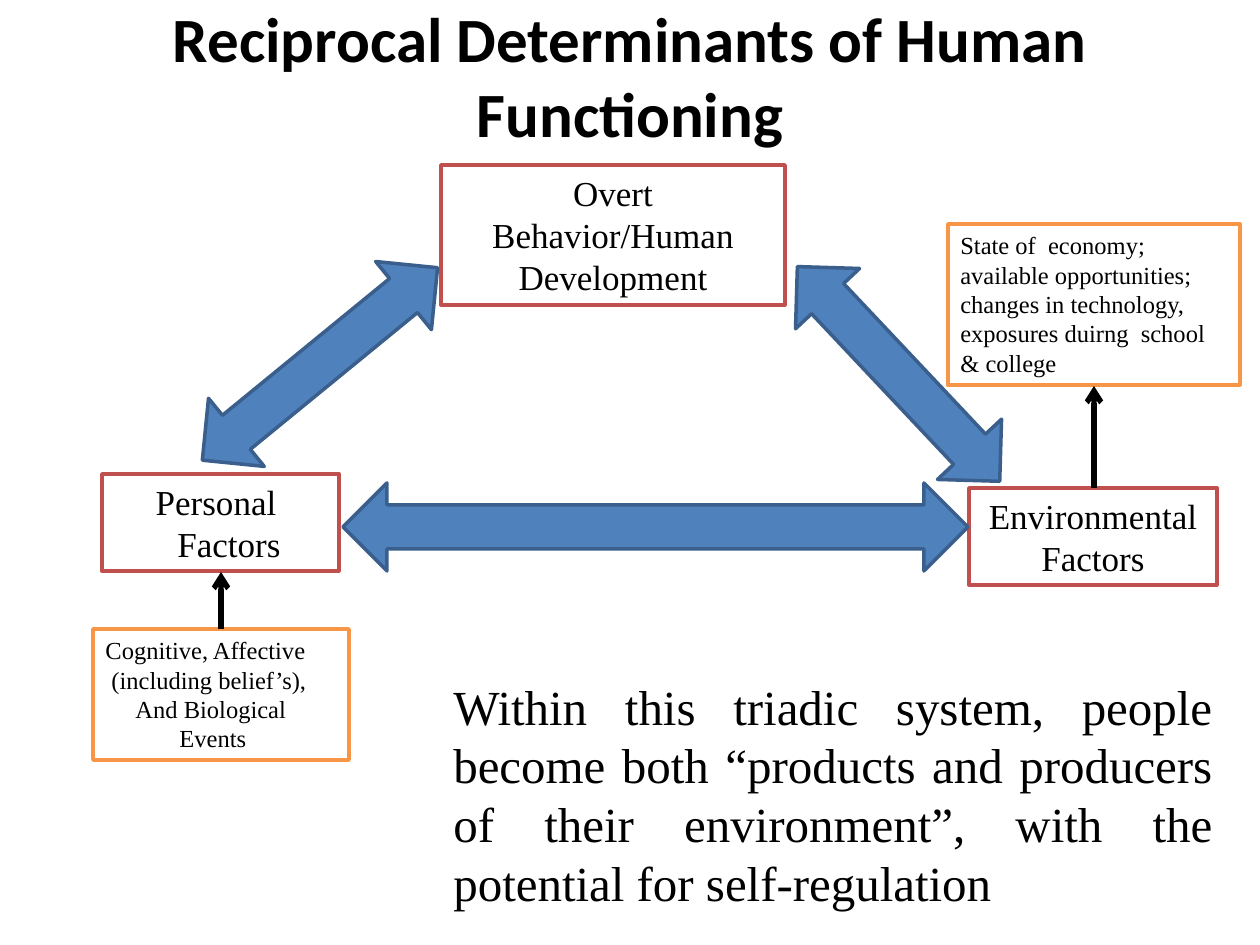
from dataclasses import dataclass

import pptx
import pptx.util
from lxml import etree
from pptx.dml.color import RGBColor
from pptx.enum.shapes import MSO_CONNECTOR, MSO_SHAPE
from pptx.enum.text import MSO_ANCHOR, MSO_AUTO_SIZE, PP_ALIGN
from pptx.oxml.ns import qn

EMU_PER_PX = 914400 / 126


@dataclass(frozen=True)
class Theme:
    ink: str = "000000"
    paper: str = "FFFFFF"
    factor: str = "C0504D"
    detail: str = "F79646"
    arrow: str = "4F81BD"
    arrow_edge: str = "3A5F8C"
    heading_font: str = "Calibri"
    body_font: str = "Times New Roman"
    title_size: int = 36
    statement_size: int = 28
    factor_size: int = 20
    detail_size: int = 14
    edge_width: int = 2
    pointer_width: int = 3


@dataclass(frozen=True)
class Area:
    left: int
    top: int
    width: int
    height: int

    def emu(self) -> list[int]:
        return [px(n) for n in (self.left, self.top, self.width, self.height)]


@dataclass(frozen=True)
class Line:
    text: str
    indent: int = 0


@dataclass(frozen=True)
class Factor:
    area: Area
    lines: tuple[Line, ...]


@dataclass(frozen=True)
class Detail:
    area: Area
    lines: tuple[Line, ...]
    pointer: tuple[int, int, int, int]


@dataclass(frozen=True)
class Exchange:
    area: Area
    rotation: float = 0


THEME = Theme()

FACTORS = (
    Factor(Area(441, 165, 344, 140), (Line("Overt Behavior/Human Development"),)),
    Factor(Area(969, 488, 248, 97), (Line("Environmental Factors"),)),
    Factor(Area(102, 474, 237, 97), (Line("Personal "), Line("Factors", 17))),
)

EXCHANGES = (
    Exchange(Area(343, 483, 625, 88)),
    Exchange(Area(168, 320, 304, 88), 320.7),
    Exchange(Area(751, 330, 295, 88), 46.7),
)

DETAILS = (
    Detail(
        Area(93, 629, 256, 131),
        (
            Line("Cognitive, Affective"),
            Line("(including belief’s),", 6),
            Line("And Biological", 30),
            Line("Events", 74),
        ),
        (221, 629, 221, 572),
    ),
    Detail(
        Area(948, 224, 292, 161),
        (Line("State of  economy; available opportunities; changes in technology, "
              "exposures duirng  school & college"),),
        (1094, 488, 1094, 386),
    ),
)

STATEMENT = ("Within this triadic system, people become both “products and producers "
             "of their environment”, with the potential for self-regulation")


def px(count: int) -> int:
    return round(count * EMU_PER_PX)


def color(code: str) -> RGBColor:
    return RGBColor.from_string(code)


def write(frame, lines: tuple[Line, ...], *, size: int, font: str = THEME.body_font,
          bold: bool = False, align=PP_ALIGN.LEFT, anchor=MSO_ANCHOR.TOP,
          before: int = 0, after: int = 0, fit=MSO_AUTO_SIZE.NONE) -> None:
    frame.word_wrap = True
    frame.auto_size = fit
    frame.vertical_anchor = anchor
    for index, line in enumerate(lines):
        para = frame.paragraphs[0] if index == 0 else frame.add_paragraph()
        para.alignment = align
        para.space_before = pptx.util.Pt(before)
        para.space_after = pptx.util.Pt(after)
        if line.indent:
            para._p.get_or_add_pPr().set("marL", str(px(line.indent)))
        span = para.add_run()
        span.text = line.text
        span.font.name = font
        span.font.size = pptx.util.Pt(size)
        span.font.bold = bold
        span.font.color.rgb = color(THEME.ink)


def draw_shape(shapes, kind, area: Area, fill: str, edge: str):
    shape = shapes.add_shape(kind, *area.emu())
    shape.shadow.inherit = False
    shape.fill.solid()
    shape.fill.fore_color.rgb = color(fill)
    shape.line.color.rgb = color(edge)
    shape.line.width = pptx.util.Pt(THEME.edge_width)
    return shape


def draw_factor(shapes, factor: Factor) -> None:
    box = draw_shape(shapes, MSO_SHAPE.RECTANGLE, factor.area, THEME.paper, THEME.factor)
    write(box.text_frame, factor.lines, size=THEME.factor_size, align=PP_ALIGN.CENTER,
          fit=MSO_AUTO_SIZE.SHAPE_TO_FIT_TEXT)


def draw_exchange(shapes, exchange: Exchange) -> None:
    arrow = draw_shape(shapes, MSO_SHAPE.LEFT_RIGHT_ARROW, exchange.area,
                       THEME.arrow, THEME.arrow_edge)
    arrow.rotation = exchange.rotation


def draw_pointer(shapes, ends: tuple[int, int, int, int]) -> None:
    pointer = shapes.add_connector(MSO_CONNECTOR.STRAIGHT, *(px(n) for n in ends))
    pointer.line.color.rgb = color(THEME.ink)
    pointer.line.width = pptx.util.Pt(THEME.pointer_width)
    etree.SubElement(pointer.line._get_or_add_ln(), qn("a:tailEnd"), type="arrow")
    etree.SubElement(pointer._element.spPr, qn("a:effectLst"))


def draw_detail(shapes, detail: Detail) -> None:
    group = shapes.add_group_shape()
    box = draw_shape(group.shapes, MSO_SHAPE.RECTANGLE, detail.area,
                     THEME.paper, THEME.detail)
    write(box.text_frame, detail.lines, size=THEME.detail_size,
          fit=MSO_AUTO_SIZE.SHAPE_TO_FIT_TEXT)
    draw_pointer(group.shapes, detail.pointer)


def main() -> None:
    deck = pptx.Presentation()
    deck.slide_width, deck.slide_height = px(1260), px(945)
    page = deck.slides.add_slide(deck.slide_layouts[5])

    # Title
    title = page.shapes.title
    title.left, title.top, title.width, title.height = Area(0, -4, 1260, 158).emu()
    write(title.text_frame, (Line("Reciprocal Determinants of Human Functioning"),),
          size=THEME.title_size, font=THEME.heading_font, bold=True,
          align=PP_ALIGN.CENTER, anchor=MSO_ANCHOR.MIDDLE)

    # Triangle of factors and the exchanges between them
    for factor in FACTORS:
        draw_factor(page.shapes, factor)
    for exchange in EXCHANGES:
        draw_exchange(page.shapes, exchange)

    # Closing statement
    statement = page.shapes.add_textbox(*Area(441, 670, 784, 251).emu())
    write(statement.text_frame, (Line(STATEMENT),), size=THEME.statement_size,
          align=PP_ALIGN.JUSTIFY, before=12, after=6,
          fit=MSO_AUTO_SIZE.SHAPE_TO_FIT_TEXT)

    # Details with their pointers
    for detail in DETAILS:
        draw_detail(page.shapes, detail)

    deck.save("out.pptx")


if __name__ == "__main__":
    main()
